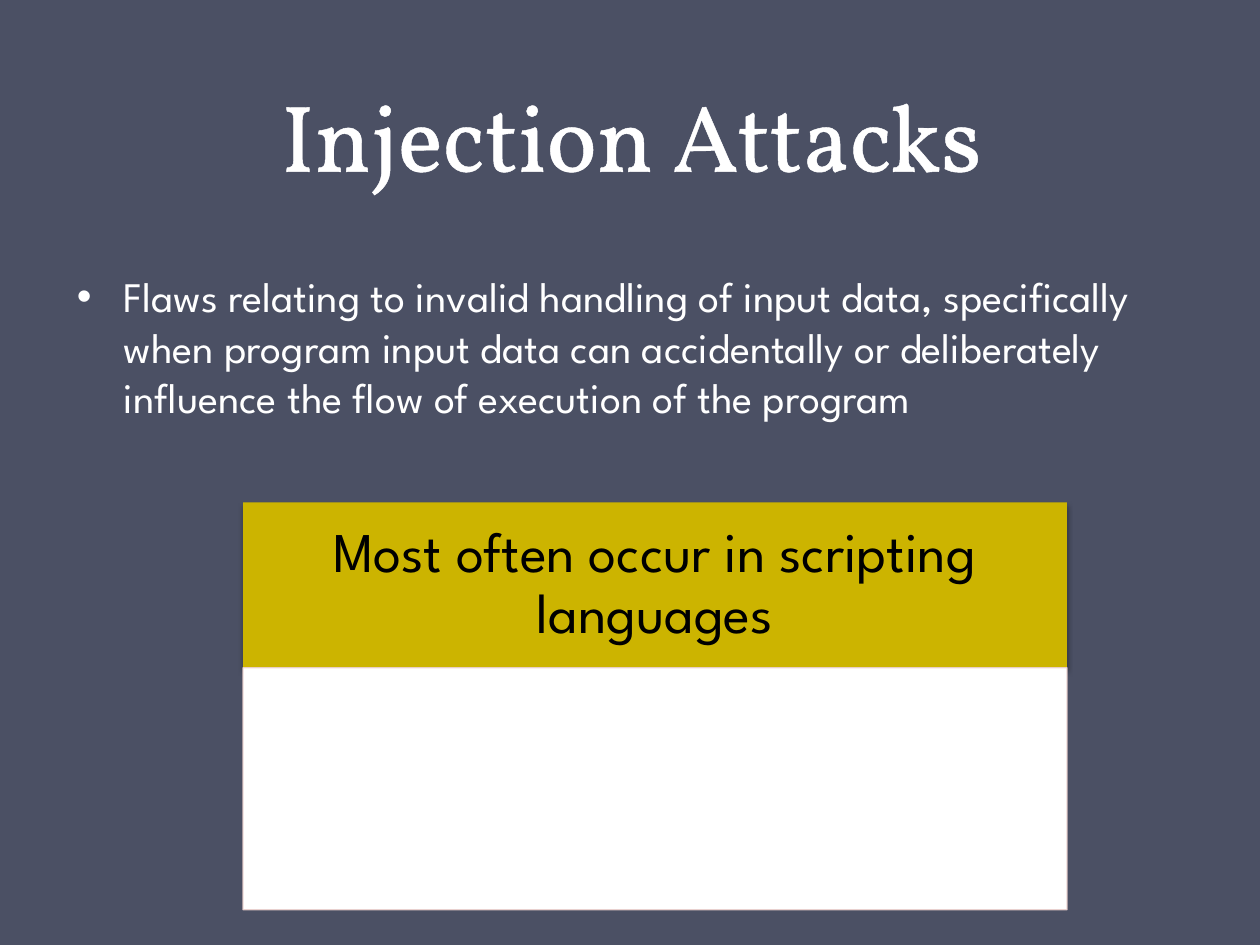
from dataclasses import dataclass

from lxml import etree
from pptx import Presentation
from pptx.dml.color import RGBColor
from pptx.enum import shapes, text
from pptx.oxml import ns
from pptx.util import Cm, Pt

SLATE = RGBColor(0x4B, 0x50, 0x64)
MUSTARD = RGBColor(0xCC, 0xB4, 0x00)
BLUSH = RGBColor(0xEE, 0xD3, 0xD0)
WHITE = RGBColor(0xFF, 0xFF, 0xFF)
BLACK = RGBColor(0x00, 0x00, 0x00)
DRAWING_NS = ns.nsdecls("a")


@dataclass(frozen=True)
class Box:
    """A rectangle on the slide, in centimetres."""
    left: float
    top: float
    width: float
    height: float

    def lengths(self) -> tuple:
        return Cm(self.left), Cm(self.top), Cm(self.width), Cm(self.height)


@dataclass(frozen=True)
class Label:
    wording: str
    box: Box
    font: str
    size: float
    color: RGBColor
    anchor: text.MSO_ANCHOR
    align: text.PP_ALIGN
    inset_x: float = 0.25
    inset_y: float = 0.13


TITLE = Label("Injection Attacks", Box(1.3, -0.48, 22.86, 4.45), "Vollkorn", 54,
              WHITE, text.MSO_ANCHOR.BOTTOM, text.PP_ALIGN.CENTER)
DEFINITION = Label(
    "Flaws relating to invalid handling of input data, specifically when program "
    "input data can accidentally or deliberately influence the flow of execution "
    "of the program",
    Box(1.3, 5.33, 22.86, 5.72), "League Spartan", 24,
    WHITE, text.MSO_ANCHOR.TOP, text.PP_ALIGN.LEFT)
HEADER_BOX = Box(4.9, 10.13, 16.61, 3.33)
HEADER = Label("Most often occur in scripting languages", HEADER_BOX,
               "League Spartan", 32, BLACK, text.MSO_ANCHOR.MIDDLE,
               text.PP_ALIGN.CENTER, 0.63, 0.36)
PANEL_BOX = Box(HEADER_BOX.left, HEADER_BOX.top + HEADER_BOX.height,
                HEADER_BOX.width, 4.88)


def add_label(parent, label: Label):
    """Add a one-paragraph text box and return its paragraph."""
    frame = parent.add_textbox(*label.box.lengths()).text_frame
    frame.word_wrap = True
    frame.vertical_anchor = label.anchor
    frame.margin_left = frame.margin_right = Cm(label.inset_x)
    frame.margin_top = frame.margin_bottom = Cm(label.inset_y)
    paragraph = frame.paragraphs[0]
    paragraph.alignment = label.align
    run = paragraph.add_run()
    run.text = label.wording
    run.font.name = label.font
    run.font.size = Pt(label.size)
    run.font.color.rgb = label.color
    return paragraph


def add_block(parent, box: Box, fill: RGBColor):
    """Add a filled rectangle without line or shadow."""
    block = parent.add_shape(shapes.MSO_SHAPE.RECTANGLE, *box.lengths())
    block.shadow.inherit = False
    block.fill.solid()
    block.fill.fore_color.rgb = fill
    block.line.fill.background()
    return block


def outline_text(run, color: RGBColor, width: float) -> None:
    run.font._element.insert(0, etree.fromstring(
        f'<a:ln {DRAWING_NS} w="{Pt(width)}"><a:solidFill>'
        f'<a:srgbClr val="{color}"/></a:solidFill></a:ln>'))


def add_bullet(paragraph, indent: float) -> None:
    properties = paragraph._p.get_or_add_pPr()
    properties.set("marL", str(Cm(indent)))
    properties.set("indent", str(-Cm(indent)))
    properties.append(etree.fromstring(f'<a:buFont {DRAWING_NS} typeface="Arial"/>'))
    properties.append(etree.fromstring(f'<a:buChar {DRAWING_NS} char="•"/>'))


def drop_shadow(block) -> None:
    effects = block._element.spPr.find(ns.qn("a:effectLst"))
    effects.append(etree.fromstring(
        f'<a:outerShdw {DRAWING_NS} blurRad="{Pt(3.1)}" dist="{Pt(1.8)}" '
        f'dir="5400000" rotWithShape="0"><a:srgbClr val="{BLACK}">'
        f'<a:alpha val="35000"/></a:srgbClr></a:outerShdw>'))


def main() -> None:
    deck = Presentation()
    deck.slide_width, deck.slide_height = Cm(25.4), Cm(19.05)
    slide = deck.slides.add_slide(deck.slide_layouts[6])
    slide.background.fill.solid()
    slide.background.fill.fore_color.rgb = SLATE

    title = add_label(slide.shapes, TITLE)
    title.line_spacing = Pt(58)
    outline_text(title.runs[0], WHITE, 1.45)

    definition = add_label(slide.shapes, DEFINITION)
    definition.space_before = Pt(4.8)
    add_bullet(definition, 0.95)

    card = slide.shapes.add_group_shape().shapes
    drop_shadow(add_block(card, HEADER_BOX, MUSTARD))
    add_label(card, HEADER).line_spacing = 0.9
    panel = add_block(card, PANEL_BOX, WHITE)
    panel.line.color.rgb = BLUSH
    panel.line.width = Pt(0.75)
    line_color = panel.line._ln.find(f".//{ns.qn('a:srgbClr')}")
    etree.SubElement(line_color, ns.qn("a:alpha")).set("val", "90000")

    deck.save("out.pptx")


if __name__ == "__main__":
    main()
